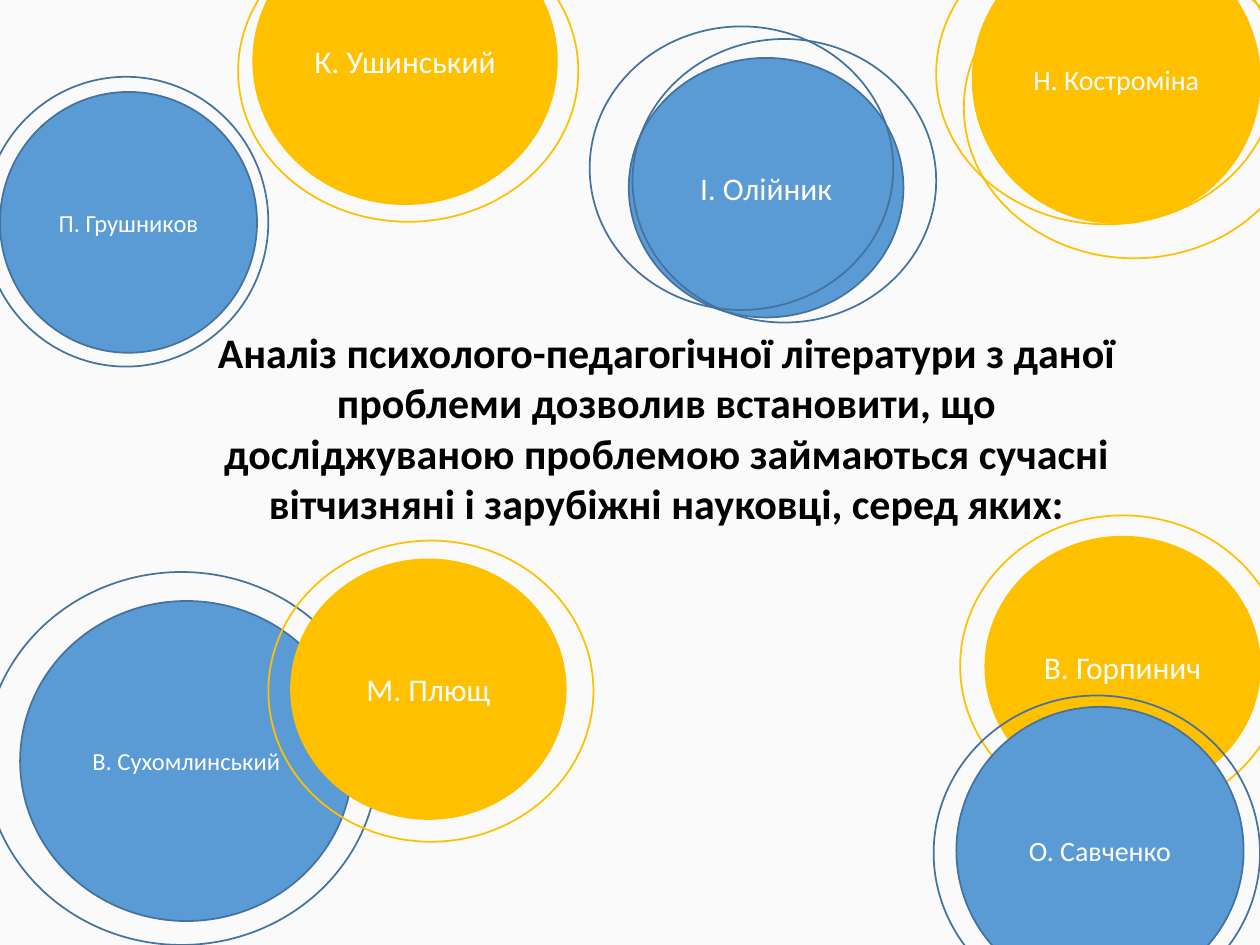
from collections import namedtuple

from pptx import Presentation
from pptx.dml.color import RGBColor
from pptx.enum.shapes import MSO_SHAPE
from pptx.enum.text import MSO_ANCHOR, MSO_AUTO_SIZE, PP_ALIGN
from pptx.util import Inches, Pt

BACKGROUND = RGBColor(0xFA, 0xFA, 0xFA)
BLUE = RGBColor(0x5B, 0x9B, 0xD5)
DARK_BLUE = RGBColor(0x43, 0x73, 0x9E)
GOLD = RGBColor(0xFF, 0xC0, 0x00)
BLACK = RGBColor(0x00, 0x00, 0x00)
WHITE = RGBColor(0xFF, 0xFF, 0xFF)
FONT = "Calibri"

# The slide is a grid of 100 columns by 75 square rows.
COLUMNS, ROWS = 100, 75
CELL = Inches(0.1)

Box = namedtuple("Box", "left top width height")
Style = namedtuple("Style", "fill line")
BLUE_STYLE = Style(BLUE, DARK_BLUE)
GOLD_STYLE = Style(GOLD, GOLD)

STATEMENT = (
    "Аналіз психолого-педагогічної літератури з даної проблеми дозволив "
    "встановити, що досліджуваною проблемою займаються сучасні вітчизняні "
    "і зарубіжні науковці, серед яких:"
)

# Name, text size, style, disc box, rings (left and top count from the disc).
SCHOLARS = [
    ("П. Грушников", 14, BLUE_STYLE, Box(0, 7.3, 20.4, 20.7),
     [Box(-1.3, -1.2, 22.6, 23)]),
    ("І. Олійник", 18, BLUE_STYLE, Box(49.9, 4.6, 21.8, 20.6),
     [Box(0.3, -1.5, 24.1, 22.5), Box(-3.1, -2.5, 24.1, 22.5)]),
    ("В. Сухомлинський", 14, BLUE_STYLE, Box(1.6, 47.7, 26.4, 25.4),
     [Box(-2.8, -2.3, 31.2, 29.6)]),
    ("Н. Костроміна", 16, GOLD_STYLE, Box(77.2, -5.1, 22.8, 22.8),
     [Box(-2.9, -1, 27, 23.9), Box(-0.7, 1.7, 27, 23.9)]),
    ("К. Ушинський", 18, GOLD_STYLE, Box(20.1, -6.5, 24.1, 22.7),
     [Box(-1.2, 0.2, 27, 23.9)]),
    ("В. Горпинич", 18, GOLD_STYLE, Box(78.2, 42.6, 21.8, 20.6),
     [Box(-2, -1.7, 25.8, 23.9)]),
    ("О. Савченко", 16, BLUE_STYLE, Box(75.9, 56.1, 22.8, 22.8),
     [Box(-1.8, -0.9, 25.9, 25)]),
    ("М. Плющ", 18, GOLD_STYLE, Box(23.1, 44.4, 21.8, 20.6),
     [Box(-1.8, -1.5, 25.8, 23.9)]),
]


def to_lengths(box):
    return [round(value * CELL) for value in box]


def write_centred(text_frame, text, size, color, bold=False):
    text_frame.word_wrap = True
    paragraph = text_frame.paragraphs[0]
    paragraph.text = text
    paragraph.alignment = PP_ALIGN.CENTER
    font = paragraph.font
    font.name, font.size, font.bold = FONT, Pt(size), bold
    font.color.rgb = color


def add_ellipse(slide, box, line_color):
    """Add an ellipse that has an outline only."""
    ellipse = slide.shapes.add_shape(MSO_SHAPE.OVAL, *to_lengths(box))
    ellipse.shadow.inherit = False
    ellipse.fill.background()
    ellipse.line.color.rgb = line_color
    ellipse.line.width = Pt(1)
    return ellipse


def add_scholar(slide, box, name, size, style, rings):
    """Add a named disc in the box and the loose rings around it."""
    disc = add_ellipse(slide, box, style.line)
    disc.fill.solid()
    disc.fill.fore_color.rgb = style.fill
    disc.text_frame.vertical_anchor = MSO_ANCHOR.MIDDLE
    write_centred(disc.text_frame, name, size, WHITE)
    for ring in rings:
        ring_box = ring._replace(left=box.left + ring.left, top=box.top + ring.top)
        add_ellipse(slide, ring_box, style.line)


def add_statement(slide, box):
    text_frame = slide.shapes.add_textbox(*to_lengths(box)).text_frame
    text_frame.auto_size = MSO_AUTO_SIZE.SHAPE_TO_FIT_TEXT
    write_centred(text_frame, STATEMENT, 24, BLACK, bold=True)


def main():
    presentation = Presentation()
    presentation.slide_width = COLUMNS * CELL
    presentation.slide_height = ROWS * CELL
    slide = presentation.slides.add_slide(presentation.slide_layouts[6])
    slide.background.fill.solid()
    slide.background.fill.fore_color.rgb = BACKGROUND

    add_statement(slide, Box(14.6, 25.4, 76.6, 17.2))
    for name, size, style, box, rings in SCHOLARS:
        add_scholar(slide, box, name, size, style, rings)

    presentation.save("out.pptx")


if __name__ == "__main__":
    main()
